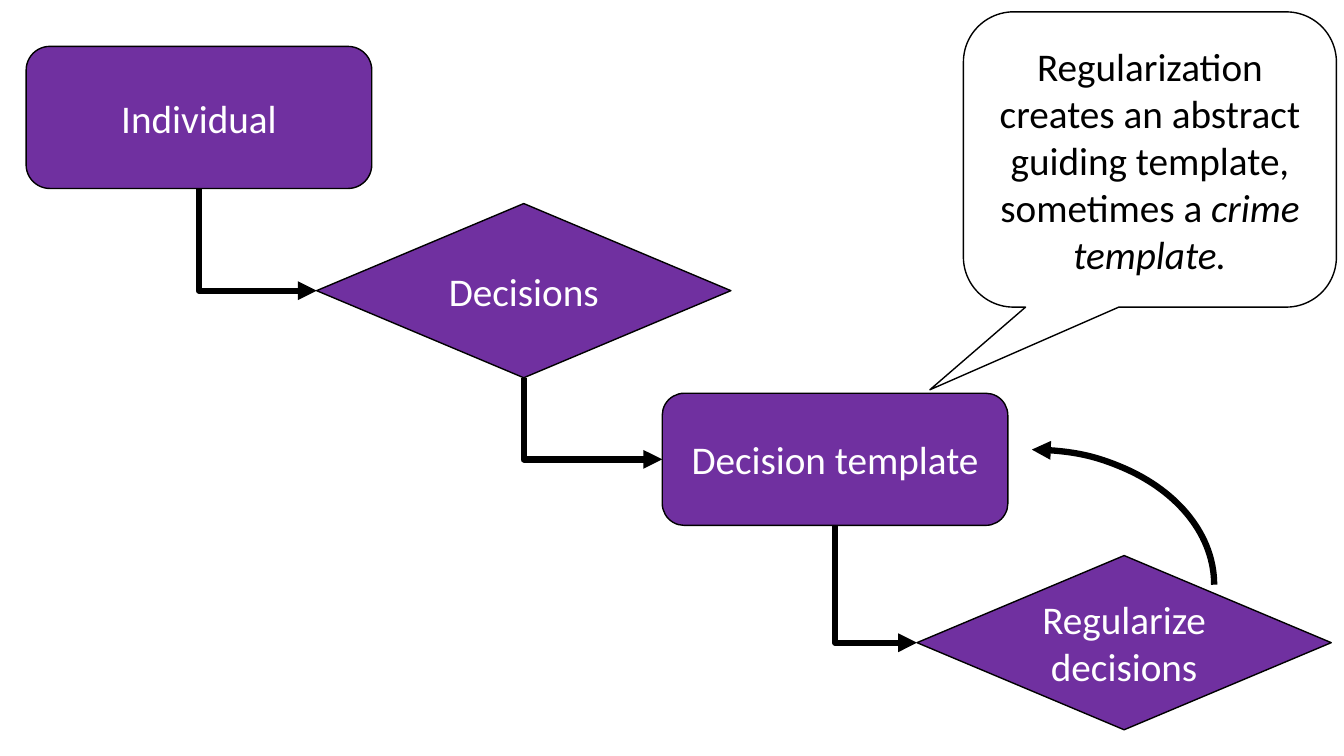
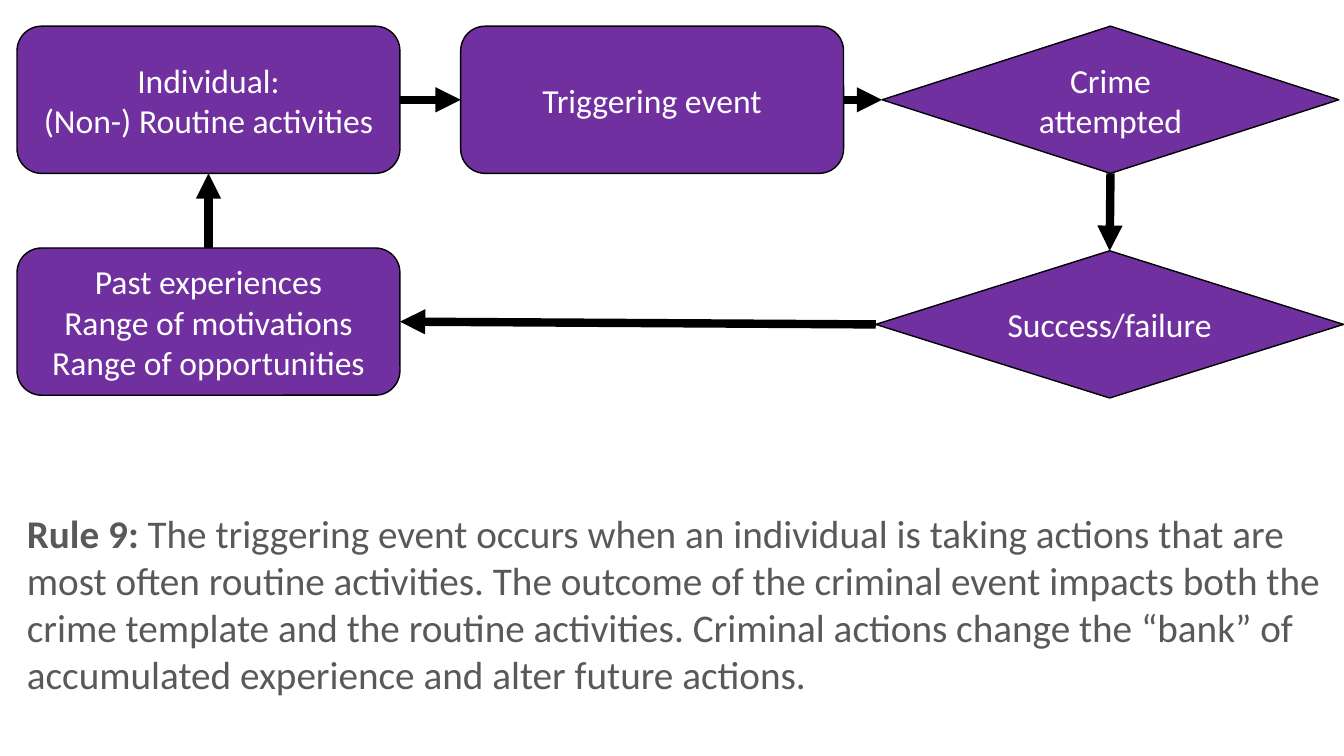
"""Build two flow chart slides on crime templates and triggering events."""

from dataclasses import dataclass

from lxml import etree
from pptx import Presentation
from pptx.dml.color import RGBColor
from pptx.enum.shapes import MSO_CONNECTOR, MSO_SHAPE
from pptx.enum.text import MSO_ANCHOR, PP_ALIGN
from pptx.oxml.ns import qn
from pptx.util import Cm, Pt

STRAIGHT, ELBOW = MSO_CONNECTOR.STRAIGHT, MSO_CONNECTOR.ELBOW
PROCESS, DECISION = MSO_SHAPE.ROUNDED_RECTANGLE, MSO_SHAPE.FLOWCHART_DECISION
CALLOUT, ARC = MSO_SHAPE.ROUNDED_RECTANGULAR_CALLOUT, MSO_SHAPE.ARC
CENTER, MIDDLE = PP_ALIGN.CENTER, MSO_ANCHOR.MIDDLE
TOP, LEFT, BOTTOM, RIGHT = range(4)
BLANK_LAYOUT = 6
SLIDE_WIDTH, SLIDE_HEIGHT = 33.87, 19.05


@dataclass(frozen=True)
class Theme:
    """Colours, font, type sizes and line widths in points."""

    purple: RGBColor = RGBColor(0x70, 0x30, 0xA0)
    black: RGBColor = RGBColor(0, 0, 0)
    white: RGBColor = RGBColor(0xFF, 0xFF, 0xFF)
    gray: RGBColor = RGBColor(0x59, 0x59, 0x59)
    font: str = "Calibri"
    large: int = 28
    medium: int = 24
    outline: float = 1
    bent_arrow: float = 4.5
    straight_arrow: float = 6


THEME = Theme()


def box(left, top, width, height):
    """Return a position and size given in centimetres as lengths."""
    return Cm(left), Cm(top), Cm(width), Cm(height)


def format_run(run, size, color):
    """Apply the theme font, a size and a colour to a run."""
    run.font.name = THEME.font
    run.font.size = Pt(size)
    run.font.color.rgb = color


def add_run(paragraph, text, size, color, bold=False, italic=False):
    """Append a formatted run to a paragraph."""
    run = paragraph.add_run()
    run.text = text
    format_run(run, size, color)
    run.font.bold = bold
    run.font.italic = italic


def set_line(line, width):
    """Give a line the theme black and a width in points."""
    line.color.rgb = THEME.black
    line.width = Pt(width)


def add_arrowhead(shape, end):
    """Put a triangle on the headEnd or tailEnd of a line."""
    line = shape.element.spPr.find(qn("a:ln"))
    etree.SubElement(line, qn(f"a:{end}"), type="triangle")


def add_outlined_shape(slide, kind, bounds, fill):
    """Add a filled preset shape with a thin outline and centred text."""
    shape = slide.shapes.add_shape(kind, *box(*bounds))
    shape.shadow.inherit = False
    shape.fill.solid()
    shape.fill.fore_color.rgb = fill
    set_line(shape.line, THEME.outline)
    shape.text_frame.word_wrap = True
    shape.text_frame.vertical_anchor = MIDDLE
    return shape


def add_node(slide, kind, bounds, text, size):
    """Add a purple flow chart node with one paragraph per text line."""
    node = add_outlined_shape(slide, kind, bounds, THEME.purple)
    node.text_frame.text = text
    for paragraph in node.text_frame.paragraphs:
        paragraph.alignment = CENTER
        for run in paragraph.runs:
            format_run(run, size, THEME.white)
    return node


def add_arrow(slide, start, start_side, end, end_side, kind=STRAIGHT,
              width=THEME.straight_arrow):
    """Join two nodes with an arrow."""
    arrow = slide.shapes.add_connector(kind, 0, 0, 0, 0)
    arrow.begin_connect(start, start_side)
    arrow.end_connect(end, end_side)
    set_line(arrow.line, width)
    add_arrowhead(arrow, "tailEnd")
    etree.SubElement(arrow.element.spPr, qn("a:effectLst"))
    return arrow


def add_bent_arrow(slide, start, end):
    """Join the bottom of one node to the left of the next with one bend."""
    arrow = add_arrow(slide, start, BOTTOM, end, LEFT, ELBOW, THEME.bent_arrow)
    across, down = arrow.width, arrow.height
    arrow.left += (across - down) // 2
    arrow.top += (down - across) // 2
    arrow.width, arrow.height = down, across
    properties = arrow.element.spPr
    properties.find(qn("a:prstGeom")).set("prst", "bentConnector2")
    transform = properties.find(qn("a:xfrm"))
    transform.set("rot", "16200000")
    transform.set("flipH", "1")


def add_return_arc(slide, bounds):
    """Add a curved arrow that leads back to an earlier step."""
    arc = slide.shapes.add_shape(ARC, *box(*bounds))
    arc.shadow.inherit = False
    arc.fill.background()
    set_line(arc.line, THEME.bent_arrow)
    add_arrowhead(arc, "headEnd")


def add_callout(slide, bounds, pointer, text, emphasis):
    """Add a speech bubble whose text ends in italics."""
    callout = add_outlined_shape(slide, CALLOUT, bounds, THEME.white)
    for index, value in enumerate(pointer):
        callout.adjustments[index] = value
    paragraph = callout.text_frame.paragraphs[0]
    paragraph.alignment = CENTER
    add_run(paragraph, text, THEME.large, THEME.black)
    add_run(paragraph, emphasis, THEME.large, THEME.black, italic=True)


def add_rule(slide, bounds, label, text):
    """Add a rule that opens with a bold label."""
    text_frame = slide.shapes.add_textbox(*box(*bounds)).text_frame
    text_frame.word_wrap = True
    paragraph = text_frame.paragraphs[0]
    add_run(paragraph, label, THEME.large, THEME.gray, bold=True)
    add_run(paragraph, text, THEME.large, THEME.gray)


def build_template_slide(slide):
    """Show how decisions become a crime template."""
    steps = [
        (PROCESS, (0.66, 1.17, 8.71, 3.58), "Individual"),
        (DECISION, (7.98, 5.13, 10.44, 4.39), "Decisions"),
        (PROCESS, (16.69, 9.91, 8.71, 3.33), "Decision template"),
        (DECISION, (23.11, 14, 10.44, 4.39), "Regularize decisions"),
    ]
    nodes = [add_node(slide, *step, THEME.large) for step in steps]
    for start, end in zip(nodes, nodes[1:]):
        add_bent_arrow(slide, start, end)
    add_return_arc(slide, (21.41, 11.33, 9.19, 6.81))
    add_callout(
        slide, (24.28, 0.3, 9.4, 7.44), (-0.59, 0.78, 0.17),
        "Regularization creates an abstract guiding template, sometimes a ",
        "crime template.")


def build_event_slide(slide):
    """Show the cycle around the triggering event."""
    margin, top, width, height = 0.43, 0.66, 9.65, 3.71
    steps = [
        (PROCESS, (margin, top, width, height),
         "Individual:\n(Non-) Routine activities"),
        (PROCESS, (11.61, top, width, height), "Triggering event"),
        (DECISION, (22.23, top, 11.51, height), "Crime attempted"),
        (DECISION, (22.07, 6.32, 11.79, height), "Success/failure"),
        (PROCESS, (margin, 6.25, width, height),
         "Past experiences\nRange of motivations\nRange of opportunities"),
    ]
    nodes = [add_node(slide, *step, THEME.medium) for step in steps]
    sides = [(RIGHT, LEFT), (RIGHT, LEFT), (BOTTOM, TOP), (LEFT, RIGHT),
             (TOP, BOTTOM)]
    for start, end, (start_side, end_side) in zip(
            nodes, nodes[1:] + nodes[:1], sides):
        add_arrow(slide, start, start_side, end, end_side)
    add_rule(
        slide, (margin, 12.7, SLIDE_WIDTH, 5.05), "Rule 9: ",
        "The triggering event occurs when an individual is taking actions "
        "that are most often routine activities. The outcome of the criminal "
        "event impacts both the crime template and the routine activities. "
        "Criminal actions change the “bank” of accumulated experience and "
        "alter future actions.")


def main():
    """Build and save the presentation."""
    presentation = Presentation()
    presentation.slide_width = Cm(SLIDE_WIDTH)
    presentation.slide_height = Cm(SLIDE_HEIGHT)
    layout = presentation.slide_layouts[BLANK_LAYOUT]
    for build in (build_template_slide, build_event_slide):
        build(presentation.slides.add_slide(layout))
    presentation.save("out.pptx")


if __name__ == "__main__":
    main()
